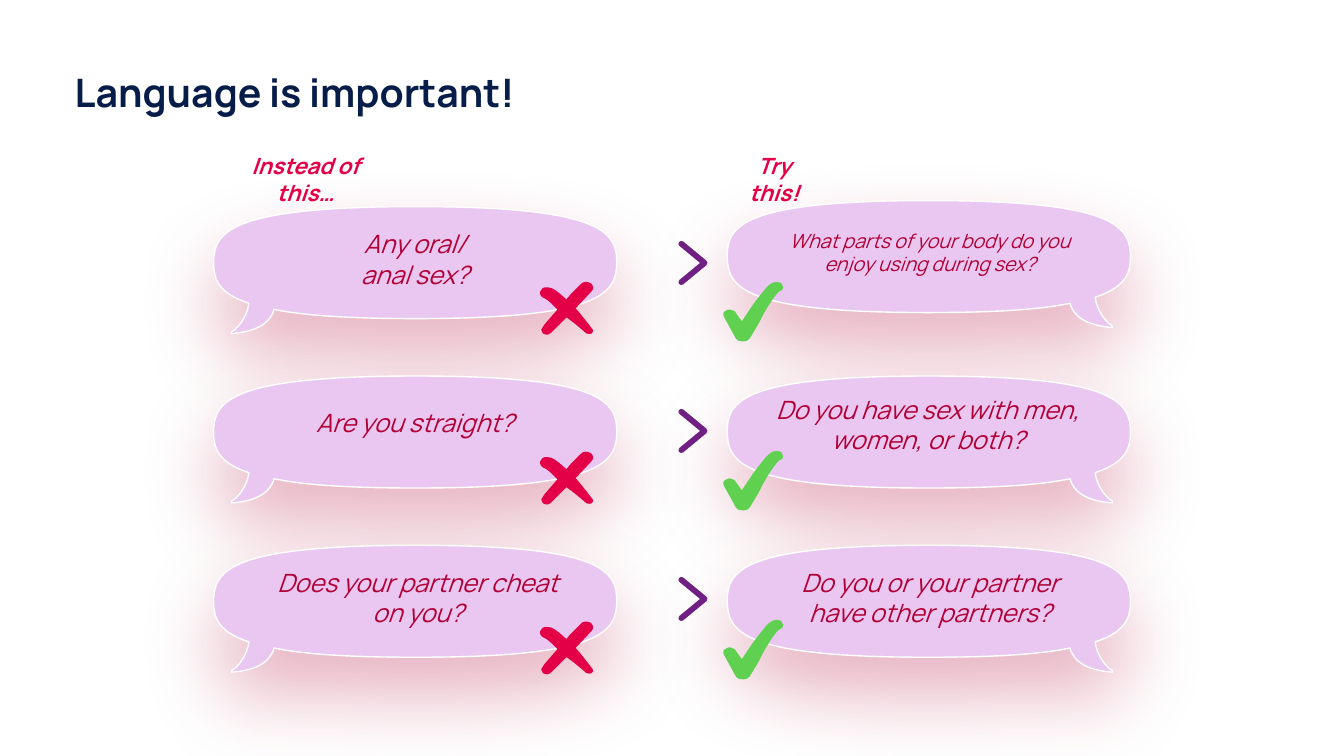
"""Build a slide that sets phrases to avoid beside better ones in speech bubbles."""
from lxml import etree
from pptx import Presentation
from pptx import util as u
from pptx.dml import color
from pptx.enum import text as t
from pptx.oxml import ns

NAVY, RED, WINE = "071D49", "E30046", "B10036"
LILAC, PURPLE, GREEN, WHITE = "EAC7F1", "702082", "5FD050", "FFFFFF"

BUBBLE_WIDTH = 288
BUBBLE = [
    (144.5, 0), (11.5, 0, 0, 18, 0, 40.3), (0, 51.8, 3.6, 62, 25.2, 69),
    (24.5, 75, 21.6, 80.6, 18, 85), (16.6, 87, 14.4, 88.6, 13, 89.3), (13, 90.7),
    (19.4, 90, 36, 88.6, 41.8, 77), (42.5, 76.3, 42.5, 75, 43.2, 73.4),
    (64, 77.8, 96.5, 80, 144.5, 80), (277, 80, 288, 62, 288, 39.6),
    (288, 18, 277, 0, 144.5, 0),
]
CROSS = [
    (5.8, 38.2), (2.9, 38.2, 1.4, 36.7, 1.4, 34.6), (3.6, 31), (13, 20.2),
    (7.9, 15.1, 5.8, 13, 3.6, 12.2), (1.4, 11.5, 0, 9.4, 0.7, 7.2),
    (1.4, 5, 2.9, 4.3, 5.8, 4.3), (9.4, 4.3, 13, 7.2, 19.4, 13),
    (22.3, 9.4), (29.5, 2.2), (31, 0, 34.6, 0, 36.7, 1.4),
    (38.9, 2.9, 38.9, 5.8, 37.4, 7.2), (25.9, 19.4),
    (28.1, 21.6, 33.8, 28.8, 38.2, 34.6), (38.9, 35.3, 38.2, 36.7, 37.4, 37.4),
    (36.7, 37.8, 35, 37.8, 33.8, 37.4), (28.8, 33.1, 23.8, 28.8, 19.4, 25.9),
    (8.6, 36.7), (7.9, 37.4, 6.5, 38.2, 5.8, 38.2),
]
TICK = [
    (15.1, 42.5), (13, 42.5, 10.8, 42.5, 9.4, 40.3), (0.7, 24.5),
    (0, 22.3, 1, 20.2, 2.9, 20.2), (4.3, 19.2, 7, 19.6, 8.6, 20.9),
    (13.7, 28.1), (20.9, 17.3), (23, 14.4, 27.4, 8.6, 31, 4.3),
    (33.1, 2.2, 35, 0.3, 38.2, 0), (41.5, 0, 43.2, 1.4, 43.2, 3.6),
    (43.2, 5, 42.5, 6.5, 41, 6.5), (39.3, 7.2, 37.4, 10.1, 35.3, 13),
    (32.4, 17.3, 28.8, 23, 25.9, 29.5), (19.4, 40.3),
    (18.7, 41.8, 16.6, 42.5, 15.1, 42.5),
]
CHEVRON = [(0, 27.4), (16.6, 13.7), (0, 0)]

PHRASES = [
    ("Any oral/\vanal sex?", (197.3, 159.8, 198, 51), 18),
    ("What parts of your body do you enjoy using during sex?", (539.3, 159.8, 250, 41), 14),
    ("Are you straight?", (197.3, 287.3, 198, 29), 18),
    ("Do you have sex with men, women, or both?", (537.8, 277.9, 250, 51), 18),
    ("Does your partner cheat on you?", (187.9, 401.8, 221, 51), 18),
    ("Do you or your partner\nhave other partners?", (539.3, 401.8, 250, 51), 18),
]
HEADINGS = [
    ("Instead of this…", (151.2, 105.1, 134, 27)),
    ("Try this!", (514.8, 105.1, 76.3, 27)),
]
BUBBLE_TOPS = [(147.6, 143.3), (268.6, 268.6), (389.5, 389.5)]


def rgb(code):
    """Turn a hex string into a colour."""
    return color.RGBColor.from_string(code)


def write(frame, text, size=18, ink=WINE, font="Manrope", bold=False, italic=False,
          align=t.PP_ALIGN.CENTER):
    """Fill a text frame and format every run in it."""
    frame.text = text
    for para in frame.paragraphs:
        para.alignment = align
        for span in para.runs:
            span.font.name, span.font.size = font, u.Pt(size)
            span.font.bold, span.font.italic = bold, italic
            span.font.color.rgb = rgb(ink)


def bend(shape, outline):
    """Turn the straight segments that have control points into curves."""
    left = min(part[-2] for part in outline)
    top = min(part[-1] for part in outline)
    lines = list(shape.element.iter(ns.qn("a:lnTo")))
    for line, part in zip(lines, outline[1:]):
        if len(part) == 2:
            continue
        curve = etree.Element(ns.qn("a:cubicBezTo"))
        for x, y in zip(part[::2], part[1::2]):
            etree.SubElement(curve, ns.qn("a:pt"), x=str(u.Pt(x - left)), y=str(u.Pt(y - top)))
        line.getparent().replace(line, curve)


class Slide:
    """Hold the current page and draw each kind of element on it."""

    def __init__(self, deck):
        """Add a page with a title placeholder."""
        self.page = deck.slides.add_slide(deck.slide_layouts[5])

    def title(self, text, area):
        """Place and format the title."""
        box = self.page.shapes.title
        box.left, box.top, box.width, box.height = map(u.Pt, area)
        frame = box.text_frame
        write(frame, text, size=28, ink=NAVY, bold=True, align=t.PP_ALIGN.LEFT)
        frame.margin_left = frame.margin_right = frame.margin_top = frame.margin_bottom = 0
        frame.vertical_anchor = t.MSO_ANCHOR.TOP
        frame.paragraphs[0].line_spacing = 0.75

    def label(self, text, area, **style):
        """Add a wrapped text box."""
        frame = self.page.shapes.add_textbox(*map(u.Pt, area)).text_frame
        frame.word_wrap = True
        write(frame, text, italic=True, **style)

    def outline(self, left, top, outline, fill=None, line=None, width=1):
        """Draw a freeform, closed when it has a fill."""
        points = [(u.Pt(part[-2]), u.Pt(part[-1])) for part in outline]
        builder = self.page.shapes.build_freeform(*points[0])
        builder.add_line_segments(points[1:], close=False)
        shape = builder.convert_to_shape(u.Pt(left), u.Pt(top))
        bend(shape, outline)
        shape.shadow.inherit = False
        if fill:
            shape.fill.solid()
            shape.fill.fore_color.rgb = rgb(fill)
        else:
            shape.fill.background()
        if line:
            shape.line.color.rgb = rgb(line)
            shape.line.width = u.Pt(width)
        else:
            shape.line.fill.background()
        return shape

    def bubble(self, left, top, mirrored):
        """Draw a speech bubble with a soft shadow below it."""
        outline = BUBBLE
        if mirrored:
            outline = [tuple(BUBBLE_WIDTH - n if i % 2 == 0 else n for i, n in enumerate(part))
                       for part in BUBBLE]
        shape = self.outline(left, top, outline, fill=LILAC, line=WHITE)
        effects = shape.element.spPr.find(ns.qn("a:effectLst"))
        shadow = etree.SubElement(effects, ns.qn("a:outerShdw"), blurRad=str(u.Pt(58.7)),
                                  dist=str(u.Pt(26.9)), dir="5400000", rotWithShape="0")
        tint = etree.SubElement(shadow, ns.qn("a:srgbClr"), val=WINE)
        etree.SubElement(tint, ns.qn("a:alpha"), val="30000")

    def chevron(self, left, top):
        """Draw an open arrow point with round ends."""
        shape = self.outline(left, top, CHEVRON, line=PURPLE, width=4.14)
        line = shape.element.spPr.find(ns.qn("a:ln"))
        line.set("cap", "rnd")
        etree.SubElement(line, ns.qn("a:round"))


def main():
    """Build the deck and save it."""
    deck = Presentation()
    deck.slide_width, deck.slide_height = u.Pt(960), u.Pt(540)
    slide = Slide(deck)
    slide.title("Language is important!", (53.3, 56.9, 871.2, 56.9))
    for left_top, right_top in BUBBLE_TOPS:
        slide.bubble(152.6, left_top, mirrored=False)
        slide.bubble(519.5, right_top, mirrored=True)
    for text, area, size in PHRASES:
        slide.label(text, area, size=size)
    for row in range(3):
        slide.outline(385.2, 200.9 + 121.3 * row, CROSS, fill=RED)
        slide.outline(516.2, 201.4 + 120.7 * row, TICK, fill=GREEN)
        slide.chevron(486.7, 174.1 + 120 * row)
    for text, area in HEADINGS:
        slide.label(text, area, size=16, ink=RED, bold=True)
    deck.save("out.pptx")


if __name__ == "__main__":
    main()
